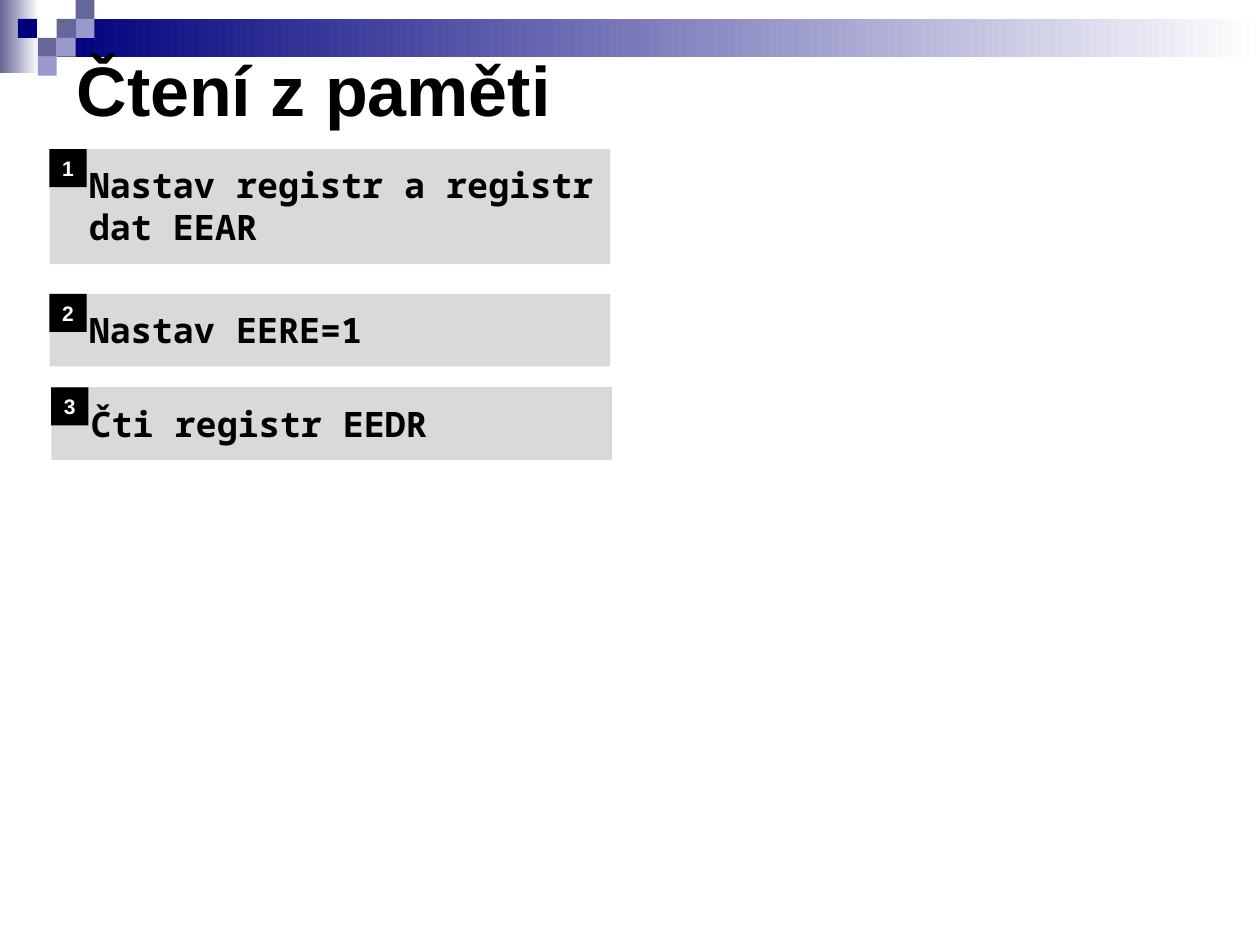
import pptx
import pptx.util
import pptx.dml.color
import pptx.enum.shapes
import pptx.enum.text

Pt = pptx.util.Pt
RGB = pptx.dml.color.RGBColor.from_string
RECT = pptx.enum.shapes.MSO_SHAPE.RECTANGLE
ALIGN = pptx.enum.text.PP_ALIGN
ANCHOR = pptx.enum.text.MSO_ANCHOR

theme = {
    "navy": "00007D", "slate": "666699", "lilac": "9999CC",
    "panel": "D9D9D9", "black": "000000", "white": "FFFFFF",
    "title": 40, "step": 20, "badge": 12,
    "sans": "Arial", "mono": "Noto Sans Mono",
}

deck = pptx.Presentation()
deck.slide_width, deck.slide_height = Pt(720), Pt(540)
slide = deck.slides.add_slide(deck.slide_layouts[6])


def add_box(left, top, width, height, *tones):
    box = slide.shapes.add_shape(RECT, Pt(left), Pt(top), Pt(width), Pt(height))
    box.shadow.inherit = False
    box.line.fill.background()
    if len(tones) == 1:
        box.fill.solid()
        box.fill.fore_color.rgb = RGB(theme[tones[0]])
    else:
        box.fill.gradient()
        box.fill.gradient_angle = 0
        for stop, tone in zip(box.fill.gradient_stops, tones):
            stop.color.rgb = RGB(theme[tone])
    return box


def set_text(box, text, size, face, tone, align, frame):
    for name, value in frame.items():
        setattr(box.text_frame, name, value)
    para = box.text_frame.paragraphs[0]
    para.alignment = align
    run = para.add_run()
    run.text = text
    style = {"size": Pt(theme[size]), "name": theme[face], "bold": True}
    for name, value in style.items():
        setattr(run.font, name, value)
    run.font.color.rgb = RGB(theme[tone])


add_box(0, 0, 22.3, 41.8, "slate", "white")
add_box(32.4, 10.8, 687.6, 21.6, "navy", "white")

unit = 10.8
tiles = [
    (3, 1, "slate"), (4, 0, "slate"), (4, 1, "lilac"), (2, 3, "lilac"),
    (2, 2, "slate"), (0.95, 1, "navy"), (3, 2, "lilac"),
]
for col, row, tone in tiles:
    add_box(col * unit, row * unit, unit, unit, tone)

title = slide.shapes.add_textbox(Pt(36.7), Pt(22.3), Pt(683.3), Pt(56.9))
set_text(title, "Čtení z paměti", "title", "sans", "black", ALIGN.LEFT,
         {"word_wrap": True, "vertical_anchor": ANCHOR.MIDDLE})

panel = {
    "word_wrap": True, "vertical_anchor": ANCHOR.TOP,
    "margin_left": Pt(22.5), "margin_right": Pt(7.2),
    "margin_top": Pt(8.5), "margin_bottom": Pt(8.5),
}
badge = {"word_wrap": False, "vertical_anchor": ANCHOR.MIDDLE}
steps = [
    (28.3, 85.2, 65.7, "Nastav registr a registr dat EEAR"),
    (28.3, 167.9, 41.5, "Nastav EERE=1"),
    (29.3, 221.3, 41.5, "Čti registr EEDR"),
]
for count, (left, top, height, text) in enumerate(steps, 1):
    step = add_box(left, top, 320.4, height, "panel")
    set_text(step, text, "step", "mono", "black", ALIGN.LEFT, panel)
    mark = add_box(left, top, 21.2, 21.8, "black")
    set_text(mark, str(count), "badge", "sans", "white", ALIGN.CENTER, badge)

deck.save("out.pptx")
